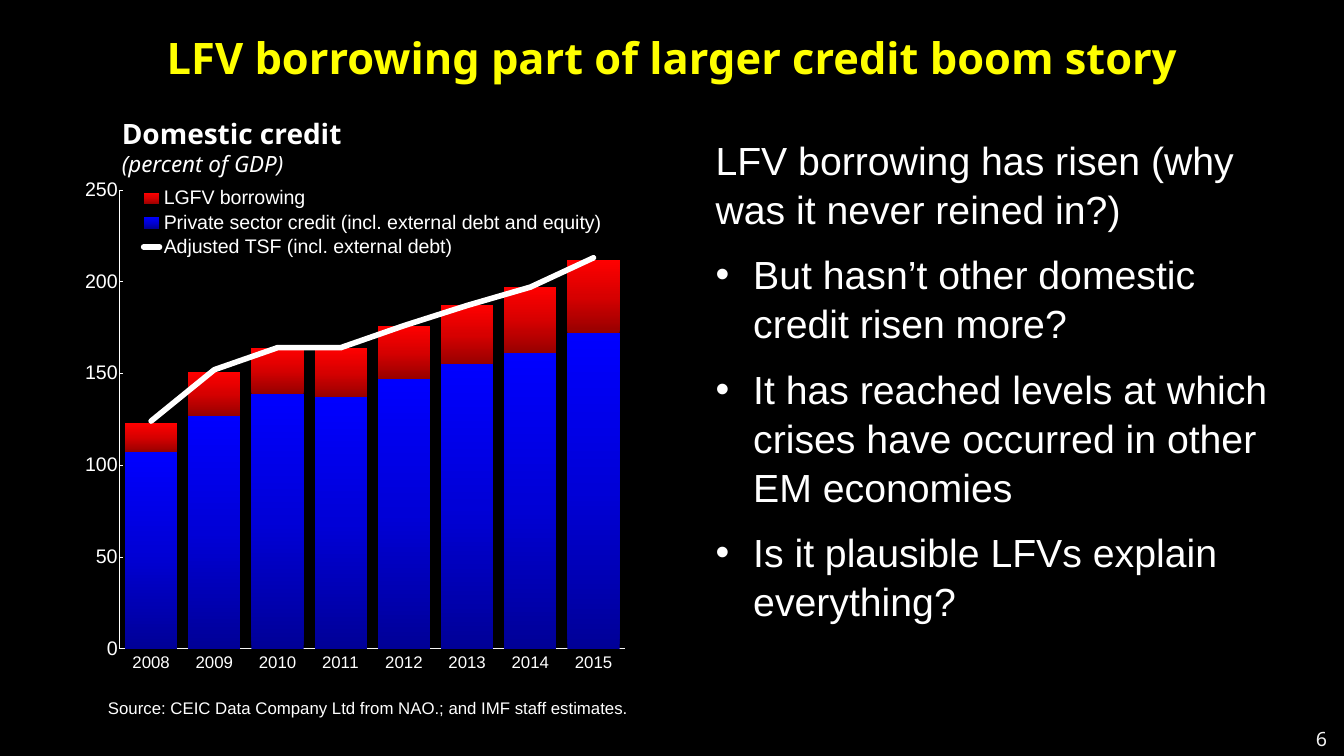
"""Build a slide on domestic credit with a combined column and line chart."""
import copy

import lxml.etree
import pptx
import pptx.chart.data
import pptx.dml.color
import pptx.enum.chart
import pptx.enum.text
import pptx.oxml.ns
import pptx.util

Cm, Pt, qn = pptx.util.Cm, pptx.util.Pt, pptx.oxml.ns.qn
SubElement = lxml.etree.SubElement


def rgb(value):
    """Turn a hex string into a colour."""
    return pptx.dml.color.RGBColor.from_string(value)


def add_text(p, text, size, font="Arial", color="FFFFFF", bold=False, italic=False):
    """Add a formatted run to a paragraph."""
    r = p.add_run()
    r.text = text
    r.font.size, r.font.name = Pt(size), font
    r.font.bold, r.font.italic = bold, italic
    r.font.color.rgb = rgb(color)


prs = pptx.Presentation()
prs.slide_width, prs.slide_height = Cm(67.74), Cm(38.1)
s = prs.slides.add_slide(prs.slide_layouts[1])
s.background.fill.solid()
s.background.fill.fore_color.rgb = rgb("000000")

title = s.shapes.title
title.left, title.top, title.width, title.height = Cm(0), Cm(1.88), Cm(67.74), Cm(2.03)
tf = title.text_frame
tf.auto_size = pptx.enum.text.MSO_AUTO_SIZE.NONE
tf.vertical_anchor = pptx.enum.text.MSO_ANCHOR.MIDDLE
tf.paragraphs[0].alignment = pptx.enum.text.PP_ALIGN.CENTER
add_text(tf.paragraphs[0], "LFV borrowing part of larger credit boom story", 62,
         font="Noto Sans", color="FFFF00", bold=True)

body = s.placeholders[1]
body.left, body.top, body.width, body.height = Cm(35.81), Cm(6.63), Cm(29.54), Cm(24.36)
tf = body.text_frame
tf.auto_size = pptx.enum.text.MSO_AUTO_SIZE.NONE
points = [
    "LFV borrowing has risen (why was it never reined in?)",
    "But hasn’t other domestic credit risen more?",
    "It has reached levels at which crises have occurred in other EM economies",
    "Is it plausible LFVs explain everything?",
]
for i, point in enumerate(points):
    p = tf.add_paragraph() if i else tf.paragraphs[0]
    pPr = p._p.get_or_add_pPr()
    indent = Cm(1.9) if i else 0
    pPr.set("marL", str(indent))
    pPr.set("indent", str(-indent))
    if i:
        SubElement(pPr, qn("a:buChar")).set("char", "•")
    else:
        SubElement(pPr, qn("a:buNone"))
    p.space_before = Pt(24 if i else 0)
    p.line_spacing = 1.04
    add_text(p, point, 56)

cd = pptx.chart.data.CategoryChartData(number_format="General")
cd.categories = [str(year) for year in range(2008, 2016)]
cd.add_series("Private sector credit (incl. external debt and equity)",
              [107, 127, 139, 137, 147, 155, 161, 172])
cd.add_series("LGFV borrowing", [16, 24, 25, 27, 29, 32, 36, 40])
cd.add_series("Adjusted TSF (incl. external debt)",
              [124, 152, 164, 164, 176, 187, 197, 213])
chart = s.shapes.add_chart(pptx.enum.chart.XL_CHART_TYPE.COLUMN_STACKED, Cm(2.84), Cm(8.81),
                           Cm(28.96), Cm(25.4), cd).chart
chart.has_title = False
chart.font.name, chart.font.size = "Arial", Pt(28)
chart.font.color.rgb = rgb("FFFFFF")

bars = chart.plots[0]
bars.gap_width, bars.overlap, bars.vary_by_categories = 21, 100, False
bar_xml = bars._element
line_xml = bar_xml.makeelement(qn("c:lineChart"))
SubElement(line_xml, qn("c:grouping")).set("val", "standard")
SubElement(line_xml, qn("c:varyColors")).set("val", "0")
ser = bar_xml.findall(qn("c:ser"))[2]
for invert in ser.findall(qn("c:invertIfNegative")):
    ser.remove(invert)
line_xml.append(ser)
SubElement(line_xml, qn("c:marker")).set("val", "1")
for axis_id in bar_xml.findall(qn("c:axId")):
    line_xml.append(copy.deepcopy(axis_id))
bar_xml.addnext(line_xml)

gradients = [("000097", "0000D7", "0000FF"), ("970000", "D70000", "FF0000")]
for series, colors in zip(bars.series, gradients):
    fill = series.format.fill
    fill.gradient()
    fill.gradient_angle = 90
    stops = next(series._element.iter(qn("a:gsLst")))
    stops.append(copy.deepcopy(stops[0]))
    for stop, color, position in zip(fill.gradient_stops, colors, (0, 0.5, 1)):
        stop.color.rgb, stop.position = rgb(color), position

trend = chart.plots[1].series[0]
trend.smooth = False
trend.marker.style = pptx.enum.chart.XL_MARKER_STYLE.NONE
trend.format.line.color.rgb = rgb("FFFFFF")
trend.format.line.width = Pt(8)
next(trend._element.iter(qn("a:ln"))).set("cap", "rnd")

tick = pptx.enum.chart.XL_TICK_MARK
axes = [(chart.category_axis, 24, "F5F5F5", tick.NONE),
        (chart.value_axis, 28, "FFFFFF", tick.INSIDE)]
for axis, size, color, mark in axes:
    axis.has_major_gridlines = False
    axis.major_tick_mark, axis.minor_tick_mark = mark, tick.NONE
    axis.tick_labels.font.size = Pt(size)
    axis.format.line.color.rgb = rgb(color)
    axis.format.line.width = Pt(0.75)
chart.category_axis.tick_label_position = pptx.enum.chart.XL_TICK_LABEL_POSITION.LOW
chart.value_axis.minimum_scale, chart.value_axis.maximum_scale = 0, 250
chart.value_axis.major_unit = 50

chart.has_legend = True
legend = chart.legend
legend.position = pptx.enum.chart.XL_LEGEND_POSITION.RIGHT
legend.include_in_layout = True
legend.font.size = Pt(28)
legend.font.color.rgb = rgb("FFFFFF")
plot_area = chart._chartSpace.chart.plotArea
layouts = [(plot_area, "inner", (0.11, 0.03, 0.88, 0.91)),
           (legend._element, None, (0.13, 0.02, 0.84, 0.15))]
for parent, target, box in layouts:
    layout = parent.find(qn("c:layout"))
    if layout is None:
        layout = parent.makeelement(qn("c:layout"))
        parent.insert(0 if target else 1, layout)
    manual = SubElement(layout, qn("c:manualLayout"))
    if target:
        SubElement(manual, qn("c:layoutTarget")).set("val", target)
    for name in ("xMode", "yMode"):
        SubElement(manual, qn("c:" + name)).set("val", "edge")
    for name, value in zip("xywh", box):
        SubElement(manual, qn("c:" + name)).set("val", str(value))

tf = s.shapes.add_textbox(Cm(5.89), Cm(5.74), Cm(26.87), Cm(3.1)).text_frame
tf.word_wrap = True
add_text(tf.paragraphs[0], "Domestic credit", 40, font="Noto Sans", bold=True)
add_text(tf.add_paragraph(), "(percent of GDP)", 32, font="Noto Sans", italic=True)

tf = s.shapes.add_textbox(Cm(4.83), Cm(34.85), Cm(55.88), Cm(1.63)).text_frame
tf.word_wrap = True
tf.margin_left = tf.margin_right = Cm(0.61)
tf.margin_top = tf.margin_bottom = Cm(0.3)
add_text(tf.paragraphs[0],
         "Source: CEIC Data Company Ltd from NAO.; and IMF staff estimates.", 24)

tf = s.shapes.add_textbox(Cm(65.71), Cm(36.5), Cm(1.8), Cm(1.42)).text_frame
tf.word_wrap = True
tf.paragraphs[0].alignment = pptx.enum.text.PP_ALIGN.CENTER
add_text(tf.paragraphs[0], "6", 28, font="Noto Sans", color="F2F2F2")

prs.save("out.pptx")
